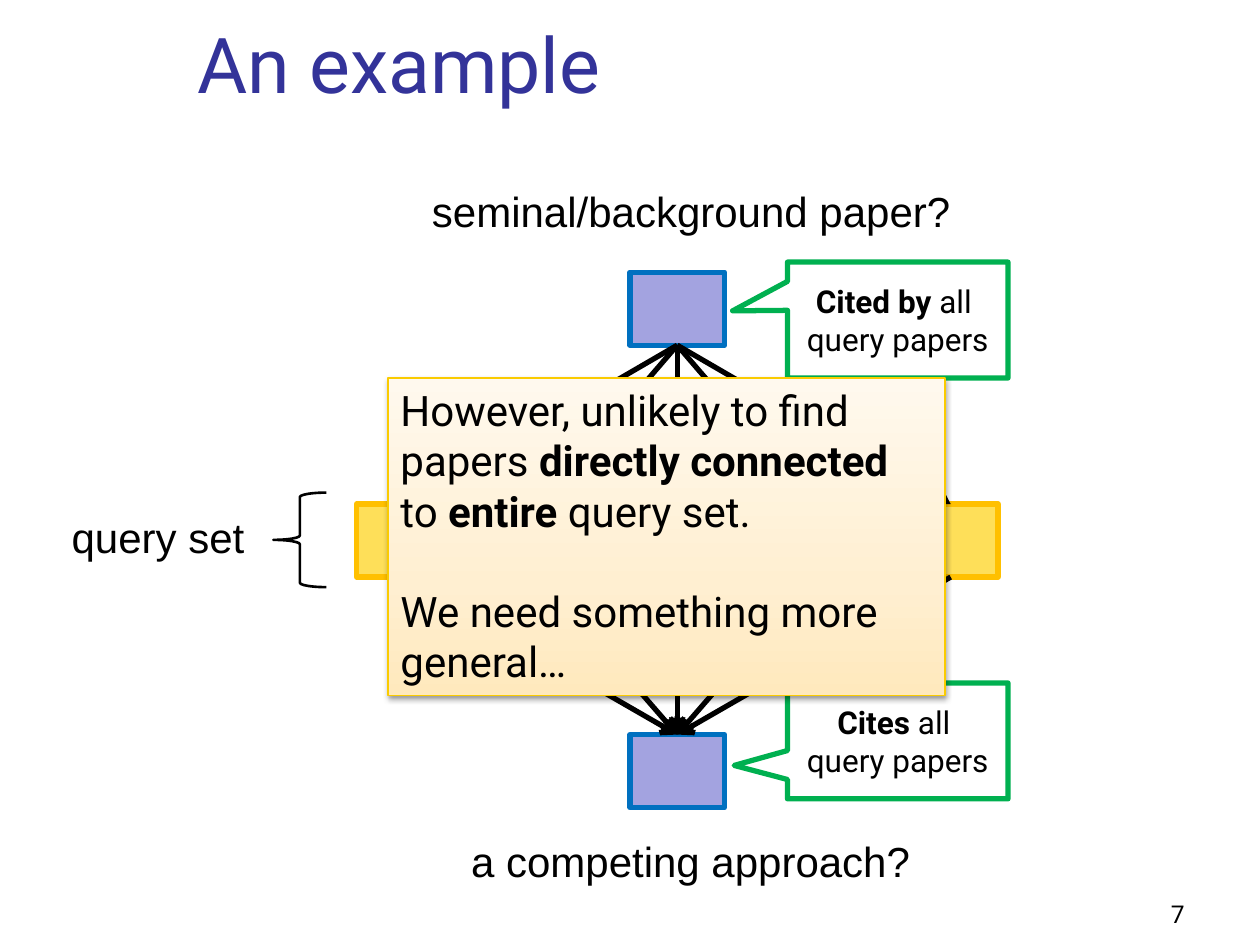
"""Build the slide on papers linked to a query set of citations."""
from copy import deepcopy
from lxml.etree import SubElement
from pptx import Presentation
from pptx.dml.color import RGBColor
from pptx.enum.shapes import MSO_CONNECTOR, MSO_SHAPE
from pptx.enum.text import MSO_ANCHOR, MSO_AUTO_SIZE, PP_ALIGN
from pptx.oxml.ns import qn
from pptx.util import Inches, Pt

COLORS = {
    "title": "333399", "text": "000000",
    "query": "FEDF59", "query_line": "FFC000",
    "paper": "A3A3E0", "paper_line": "0070C0",
    "callout_line": "00B050", "note_line": "FACB00",
    "note_dark": "FFE9BD", "note_middle": "FFEFD1", "note_light": "FFF9EE",
}
TITLE = {"name": "Roboto", "size": Pt(44)}
NUMBER = {"name": "Roboto", "size": Pt(14)}
LABEL = {"name": "Arial", "size": Pt(24)}
CALLOUT = {"name": "Roboto", "size": Pt(18)}
NOTE = {"name": "Roboto", "size": Pt(24)}

deck = Presentation()
deck.slide_width, deck.slide_height = Inches(10), Inches(7.5)
page = deck.slides.add_slide(deck.slide_layouts[6])


def add_preset(preset, place, line, width, fill=None):
    shape = page.shapes.add_shape(preset, *[Inches(length) for length in place])
    shape.shadow.inherit = False
    shape.line.color.rgb = RGBColor.from_string(COLORS[line])
    shape.line.width = Pt(width)
    if fill:
        shape.fill.solid()
        shape.fill.fore_color.rgb = RGBColor.from_string(COLORS[fill])
    else:
        shape.fill.background()
    return shape


def write(box, paragraphs, font, color="text", align=PP_ALIGN.LEFT, **frame_format):
    frame = box.text_frame
    for name, value in frame_format.items():
        setattr(frame, name, value)
    for index, spans in enumerate(paragraphs):
        para = frame.add_paragraph() if index else frame.paragraphs[0]
        para.alignment = align
        for text, bold in spans:
            span = para.add_run()
            span.text = text
            for name, value in {**font, "bold": bold}.items():
                setattr(span.font, name, value)
            span.font.color.rgb = RGBColor.from_string(COLORS[color])


title = page.shapes.add_textbox(Inches(1.47), Inches(0.08), Inches(8.2), Inches(0.83))
write(title, [[("An example", False)]], TITLE, "title",
      word_wrap=True, vertical_anchor=MSO_ANCHOR.BOTTOM)
number = page.shapes.add_textbox(Inches(7.42), Inches(6.92), Inches(2.08), Inches(0.5))
write(number, [[("7", False)]], NUMBER, align=PP_ALIGN.RIGHT,
      word_wrap=True, vertical_anchor=MSO_ANCHOR.BOTTOM)

query_papers = [
    add_preset(MSO_SHAPE.RECTANGLE, (2.83 + 1.085 * column, 4, 0.75, 0.58),
               "query_line", 3, "query")
    for column in range(5)
]
add_preset(MSO_SHAPE.LEFT_BRACE, (2.17, 3.91, 0.42, 0.75), "text", 1.5)
cited_paper, citing_paper = [
    add_preset(MSO_SHAPE.RECTANGLE, (5, top, 0.75, 0.58), "paper_line", 3, "paper")
    for top in (2.16, 5.83)
]

links = [(cited_paper, query) for query in query_papers]
links += [(query, citing_paper) for query in query_papers]
for start, end in links:
    arrow = page.shapes.add_connector(MSO_CONNECTOR.STRAIGHT, 0, 0, 0, 0)
    arrow.begin_connect(start, 2)
    arrow.end_connect(end, 0)
    arrow.line.color.rgb = RGBColor.from_string(COLORS["text"])
    arrow.line.width = Pt(3)
    SubElement(arrow.line._get_or_add_ln(), qn("a:tailEnd"), type="arrow")
    SubElement(arrow._element.spPr, qn("a:effectLst"))

for text, left, top, width in [
    ("query set", 0.47, 4.01, 1.59),
    ("seminal/background paper?", 3.33, 1.42, 4.36),
    ("a competing approach?", 3.64, 6.58, 3.72),
]:
    label = page.shapes.add_textbox(Inches(left), Inches(top), Inches(width), Inches(0.5))
    write(label, [[(text, False)]], LABEL, word_wrap=False,
          auto_size=MSO_AUTO_SIZE.SHAPE_TO_FIT_TEXT)

for relation, top, tip in [
    ("Cited by ", 2.08, (-0.749, -0.079)),
    ("Cites ", 5.42, (-0.742, 0.212)),
]:
    callout = add_preset(MSO_SHAPE.RECTANGULAR_CALLOUT, (6.25, top, 1.75, 0.92),
                         "callout_line", 3)
    for index, offset in enumerate(tip):
        callout.adjustments[index] = offset
    write(callout, [[(relation, True), ("all ", False)], [("query papers", False)]],
          CALLOUT, align=PP_ALIGN.CENTER, word_wrap=False,
          vertical_anchor=MSO_ANCHOR.MIDDLE)

note = add_preset(MSO_SHAPE.RECTANGLE, (3.08, 3, 4.42, 2.52), "note_line", 0.75)
note.fill.gradient()
note.fill.gradient_angle = 90
stop_list = note._element.spPr.find(qn("a:gradFill")).find(qn("a:gsLst"))
stop_list.append(deepcopy(stop_list[0]))
for stop, (position, color) in zip(note.fill.gradient_stops, [
    (0, "note_dark"), (0.35, "note_middle"), (1, "note_light"),
]):
    stop.position = position
    stop.color.rgb = RGBColor.from_string(COLORS[color])
effects = note._element.spPr.find(qn("a:effectLst"))
shadow = SubElement(effects, qn("a:outerShdw"), blurRad=str(Pt(3.1)),
                    dist=str(Pt(1.6)), dir="5400000", rotWithShape="0")
shade = SubElement(shadow, qn("a:srgbClr"), val=COLORS["text"])
SubElement(shade, qn("a:alpha"), val="38000")
write(note, [
    [("However, unlikely to find papers ", False), ("directly connected ", True),
     ("to ", False), ("entire", True), (" query set.", False)],
    [("We need something more general…", False)],
], NOTE, word_wrap=True, vertical_anchor=MSO_ANCHOR.TOP,
    auto_size=MSO_AUTO_SIZE.SHAPE_TO_FIT_TEXT)
note.text_frame.paragraphs[1].space_before = Pt(28.5)

deck.save("out.pptx")
